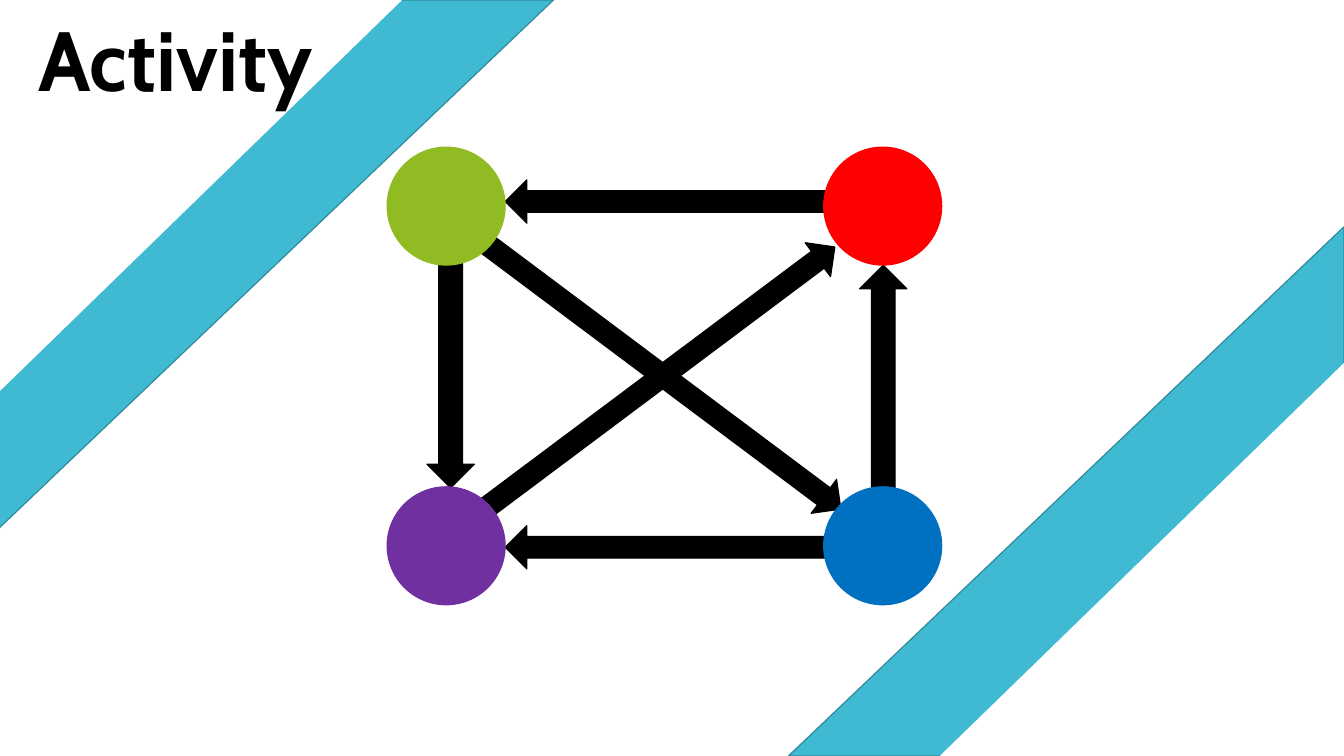
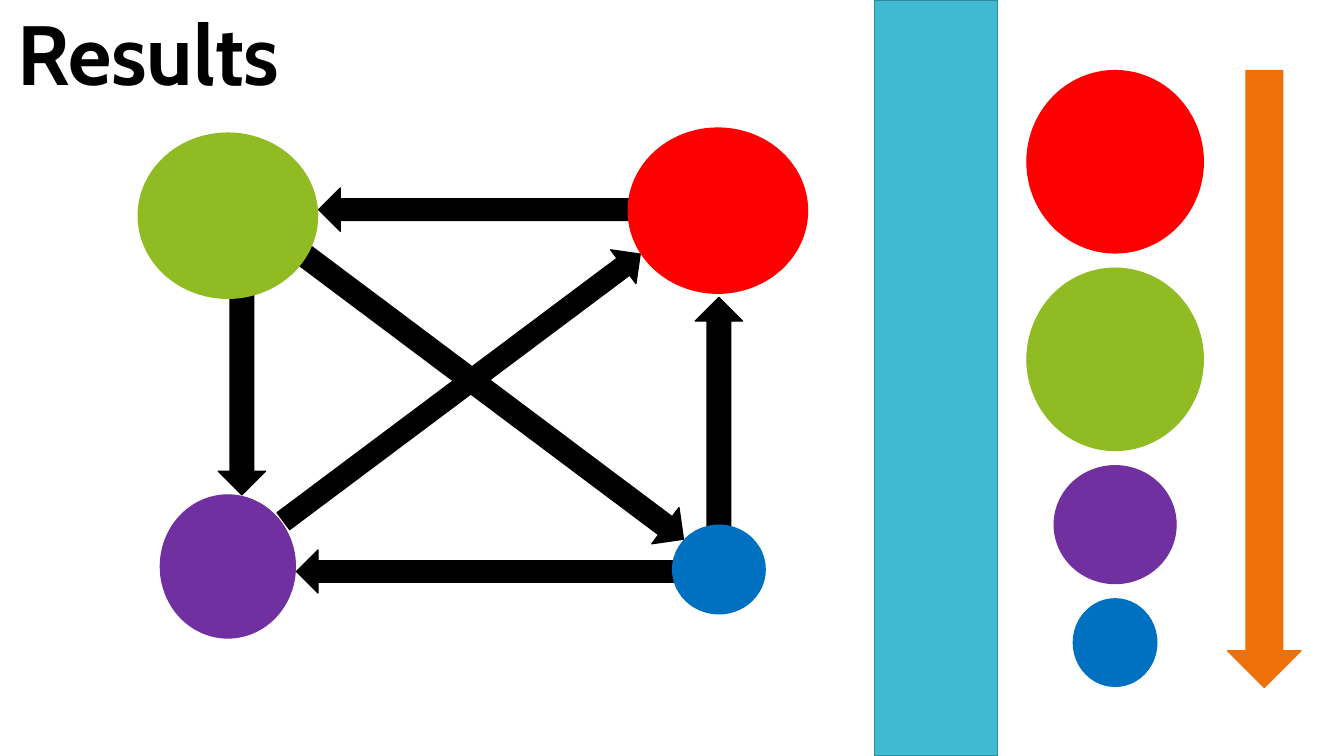
from math import atan2, degrees, hypot

from pptx import Presentation
from pptx.dml.color import RGBColor
from pptx.enum.shapes import MSO_SHAPE as SHAPE
from pptx.enum.text import MSO_ANCHOR as ANCHOR, PP_ALIGN as ALIGN
from pptx.util import Inches, Pt

WIDTH, HEIGHT = 13.33, 7.5
RED, GREEN, PURPLE, BLUE = "FF0000", "90BB23", "7030A0", "0070C0"
BLACK, WHITE, ORANGE = "000000", "FFFFFF", "EE7008"
BAND, BAND_EDGE = "40BAD2", "2F8A9B"
TITLE_HEIGHT = 1.11

NODE = 1.17
ACTIVITY = {
    "title": ("Activity", 0.28, 0.02, 3.03),
    "arrows": [
        ((4.74, 5.1), (8.28, 2.45), 0.42),
        ((4.8, 2.4), (8.34, 5.05), 0.42),
        ((8.79, 2), (5.01, 2), 0.43),
        ((8.79, 5.43), (5.01, 5.43), 0.43),
        ((4.47, 1.73), (4.47, 4.84), 0.47),
        ((8.76, 5.74), (8.76, 2.63), 0.47),
    ],
    "nodes": [
        (GREEN, 3.84, 1.46, NODE, NODE),
        (RED, 8.17, 1.46, NODE, NODE),
        (PURPLE, 3.84, 4.83, NODE, NODE),
        (BLUE, 8.17, 4.83, NODE, NODE),
    ],
}
RESULTS = {
    "title": ("Results", 0.07, -0.04, 2.85),
    "arrows": [
        ((2.81, 5.17), (6.35, 2.52), 0.42),
        ((2.47, 2.12), (6.78, 5.35), 0.45),
        ((6.94, 2.08), (3.16, 2.08), 0.43),
        ((6.72, 5.67), (2.94, 5.67), 0.43),
        ((2.4, 1.8), (2.4, 4.91), 0.47),
        ((7.13, 6.06), (7.13, 2.95), 0.47),
    ],
    "nodes": [
        (GREEN, 1.37, 1.32, 1.78, 1.64),
        (RED, 6.23, 1.27, 1.78, 1.64),
        (PURPLE, 1.59, 4.91, 1.34, 1.42),
        (BLUE, 6.67, 5.21, 0.92, 0.88),
    ],
}
RANKING = [(RED, 1.75, 1.81), (GREEN, 1.75, 1.81), (PURPLE, 1.21, 1.17), (BLUE, 0.83, 0.87)]
RANKING_CENTER, RANKING_TOP, RANKING_GAP = 11.06, 0.7, 0.15
CORNER_TRIANGLES = [(5.51, 5.25, BAND, BAND_EDGE), (4, 3.89, WHITE, WHITE)]


def color(value):
    return RGBColor.from_string(value)


def add_figure(slide, kind, left, top, width, height, fill, edge=None):
    figure = slide.shapes.add_shape(
        kind, Inches(left), Inches(top), Inches(width), Inches(height))
    figure.shadow.inherit = False
    figure.fill.solid()
    figure.fill.fore_color.rgb = color(fill)
    figure.line.color.rgb = color(edge or fill)
    figure.line.width = Pt(0.85)
    return figure


def add_arrow(slide, start, end, thickness, fill=BLACK):
    (x1, y1), (x2, y2) = start, end
    length = hypot(x2 - x1, y2 - y1)
    left = (x1 + x2 - thickness) / 2
    top = (y1 + y2 - length) / 2
    arrow = add_figure(slide, SHAPE.DOWN_ARROW, left, top, thickness, length, fill)
    arrow.rotation = degrees(atan2(x1 - x2, y2 - y1)) % 360


def add_graph(slide, graph):
    for start, end, thickness in graph["arrows"]:
        add_arrow(slide, start, end, thickness)
    for fill, *box in graph["nodes"]:
        add_figure(slide, SHAPE.OVAL, *box, fill)


def add_corner_bands(slide):
    for width, height, fill, edge in CORNER_TRIANGLES:
        corners = [(WIDTH - width, HEIGHT - height, "flipH"), (-0.02, 0, "flipV")]
        for left, top, flip in corners:
            corner = add_figure(
                slide, SHAPE.RIGHT_TRIANGLE, left, top, width, height, fill, edge)
            corner.element.spPr.xfrm.set(flip, "1")


def add_ranking(slide):
    top = RANKING_TOP
    for fill, width, height in RANKING:
        left = RANKING_CENTER - width / 2
        add_figure(slide, SHAPE.OVAL, left, top, width, height, fill)
        top += height + RANKING_GAP
    add_arrow(slide, (12.54, RANKING_TOP), (12.54, 6.82), 0.73, ORANGE)


def place_title(slide, wording, left, top, width):
    title = slide.shapes.title
    title.left, title.top = Inches(left), Inches(top)
    title.width, title.height = Inches(width), Inches(TITLE_HEIGHT)
    frame = title.text_frame
    frame.text = wording
    frame.word_wrap = False
    frame.vertical_anchor = ANCHOR.TOP
    paragraph = frame.paragraphs[0]
    paragraph.alignment = ALIGN.LEFT
    font = paragraph.runs[0].font
    font.name, font.size, font.bold = "Cabin", Pt(60), True
    font.color.rgb = color(BLACK)
    slide.shapes.element.append(title.element)


def main():
    deck = Presentation()
    deck.slide_width, deck.slide_height = Inches(WIDTH), Inches(HEIGHT)
    title_only = deck.slide_layouts[5]

    activity = deck.slides.add_slide(title_only)
    add_corner_bands(activity)
    add_graph(activity, ACTIVITY)
    place_title(activity, *ACTIVITY["title"])

    results = deck.slides.add_slide(title_only)
    add_figure(results, SHAPE.RECTANGLE, 8.67, 0, 1.22, HEIGHT, BAND, BAND_EDGE)
    add_ranking(results)
    add_graph(results, RESULTS)
    place_title(results, *RESULTS["title"])

    deck.save("out.pptx")


if __name__ == "__main__":
    main()
